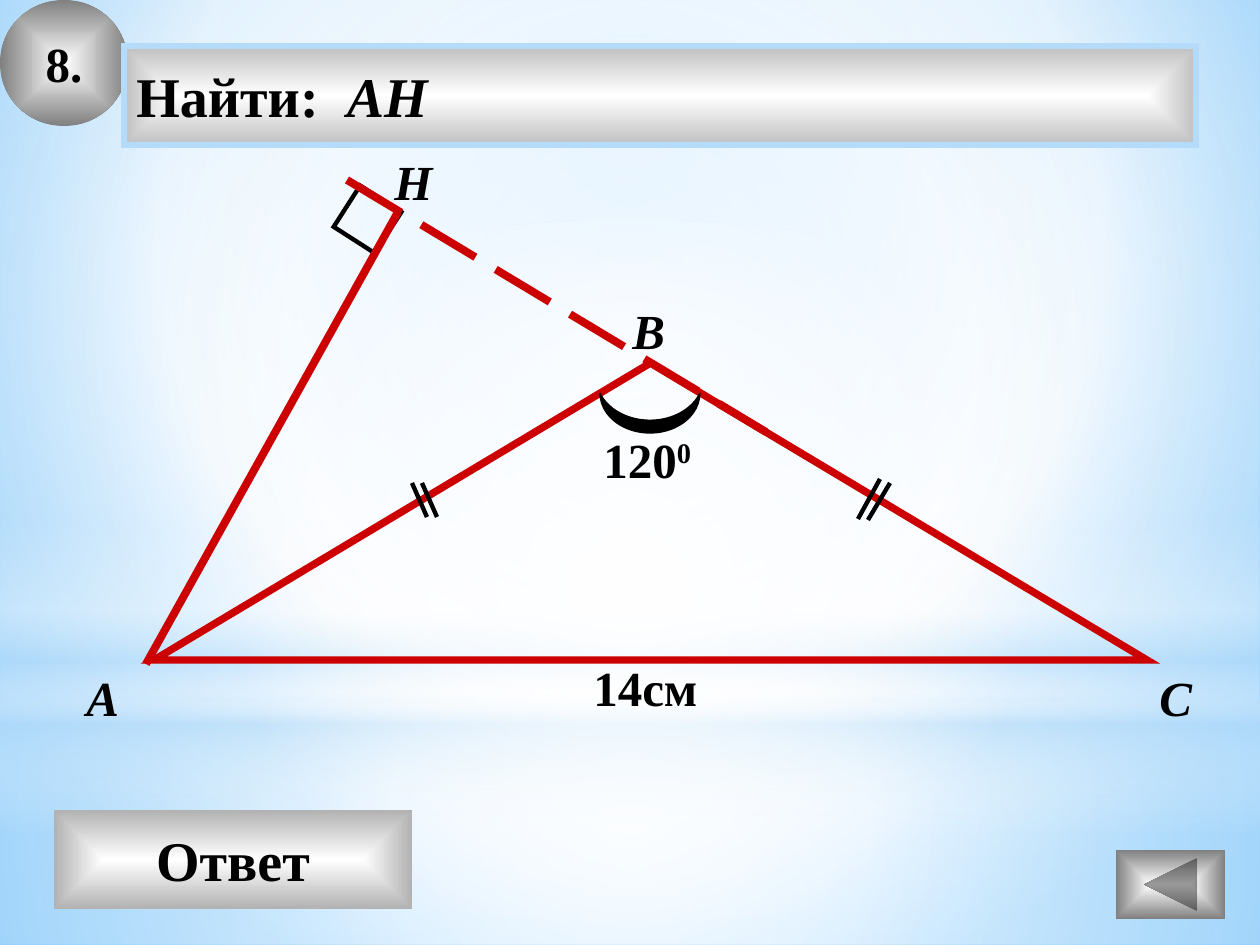
from pptx import Presentation
from pptx.dml.color import RGBColor
from pptx.enum.dml import MSO_LINE
from pptx.enum.shapes import MSO_CONNECTOR, MSO_SHAPE
from pptx.enum.text import MSO_ANCHOR, PP_ALIGN
from pptx.oxml import parse_xml
from pptx.oxml.ns import nsdecls, qn
from pptx.util import Pt

PX = 914400 / 126
FONT = "Times New Roman"
BLACK = RGBColor(0x00, 0x00, 0x00)
WHITE = RGBColor(0xFF, 0xFF, 0xFF)
RED = RGBColor(0xCC, 0x00, 0x00)
PALE = RGBColor(0xB4, 0xDC, 0xFA)
SKY = RGBColor(0x9E, 0xD5, 0xFF)
BLUE = RGBColor(0x5B, 0xB9, 0xFF)
GRAY = RGBColor(0x80, 0x80, 0x80)
SILVER = RGBColor(0xB2, 0xB2, 0xB2)
LIGHT = RGBColor(0xC0, 0xC0, 0xC0)

RECT, OVAL = MSO_SHAPE.RECTANGLE, MSO_SHAPE.OVAL
TRIANGLE, MOON = MSO_SHAPE.ISOSCELES_TRIANGLE, MSO_SHAPE.MOON
BUTTON = MSO_SHAPE.ACTION_BUTTON_CUSTOM
BACK = MSO_SHAPE.ACTION_BUTTON_BACK_OR_PREVIOUS
STRAIGHT = MSO_CONNECTOR.STRAIGHT
DASH = MSO_LINE.LONG_DASH
LEFT, CENTER = PP_ALIGN.LEFT, PP_ALIGN.CENTER
MIDDLE = MSO_ANCHOR.MIDDLE


def emu(*lengths):
    return [round(n * PX) for n in lengths]


def set_gradient(parent, stops, kind="circle", to=(50, 50, 50, 50)):
    """Swap the noFill of parent for a gradient; stops are (pos, colour, alpha)."""
    gs = "".join(
        f'<a:gs pos="{pos * 1000}"><a:srgbClr val="{color}">'
        f'<a:alpha val="{alpha * 1000}"/></a:srgbClr></a:gs>'
        for pos, color, alpha in stops)
    if kind == "linear":
        shade = '<a:lin ang="5400000" scaled="0"/>'
    else:
        l, t, r, b = (n * 1000 for n in to)
        shade = (f'<a:path path="{kind}">'
                 f'<a:fillToRect l="{l}" t="{t}" r="{r}" b="{b}"/></a:path>')
    grad = parse_xml(f'<a:gradFill {nsdecls("a")} rotWithShape="1">'
                     f'<a:gsLst>{gs}</a:gsLst>{shade}</a:gradFill>')
    parent.replace(parent.find(qn("a:noFill")), grad)


def set_line(line, color, width):
    line.color.rgb = color
    line.width = Pt(width)


def add_shape(s, kind, box, line=None, width=1):
    sp = s.shapes.add_shape(kind, *emu(*box))
    sp.shadow.inherit = False
    sp.fill.background()
    if line is None:
        sp.line.fill.background()
    else:
        set_line(sp.line, line, width)
        sp.line._ln.append(parse_xml(f'<a:miter {nsdecls("a")} lim="800000"/>'))
    return sp


def add_gradient_shape(s, kind, box, stops, shade="circle", **line):
    sp = add_shape(s, kind, box, **line)
    set_gradient(sp._element.spPr, stops, shade)
    return sp


def add_plate(s, kind, box, edge, shade, **line):
    stops = [(0, WHITE, 100), (100, edge, 100)]
    return add_gradient_shape(s, kind, box, stops, shade, **line)


def add_run(p, text, size, italic=False, raised=False):
    r = p.add_run()
    r.text = text
    r.font.name, r.font.size = FONT, Pt(size)
    r.font.bold, r.font.italic = True, italic
    r.font.color.rgb = BLACK
    if raised:
        r._r.get_or_add_rPr().set("baseline", "30000")


def start_text(sp, align):
    tf = sp.text_frame
    tf.word_wrap = False
    tf.vertical_anchor = MIDDLE
    p = tf.paragraphs[0]
    p.alignment = align
    return p


def add_label(s, x, y, w, text, italic=False, wrap=False):
    tf = s.shapes.add_textbox(*emu(x, y, w, 72)).text_frame
    tf.word_wrap = wrap
    p = tf.paragraphs[0]
    add_run(p, text, 28, italic)
    return p


def add_segment(s, ends, color, width, dash=None):
    c = s.shapes.add_connector(STRAIGHT, *emu(*ends))
    set_line(c.line, color, width)
    if dash is not None:
        c.line.dash_style = dash
    c._element.spPr.append(parse_xml(f'<a:effectLst {nsdecls("a")}/>'))


def add_backdrop(s):
    s.background.fill.background()
    set_gradient(s.element.xpath(".//p:bgPr")[0],
                 [(0, SKY, 100), (60, WHITE, 100), (100, BLUE, 100)],
                 to=(20, 10, 20, 60))
    add_gradient_shape(s, RECT, (0, 703, 1260, 242),
                       [(0, WHITE, 91), (37, WHITE, 76), (100, PALE, 79)])
    add_gradient_shape(s, RECT, (0, 0, 1260, 703),
                       [(0, WHITE, 89), (48, WHITE, 62), (100, PALE, 79)])
    add_gradient_shape(s, RECT, (0, 519, 1260, 315),
                       [(0, WHITE, 0), (29, WHITE, 30), (45, PALE, 40),
                        (55, WHITE, 26), (65, PALE, 60), (100, WHITE, 0)], "linear")
    add_gradient_shape(s, OVAL, (0, 220, 1260, 703),
                       [(0, WHITE, 100), (56, WHITE, 0)])


def main():
    prs = Presentation()
    prs.slide_width, prs.slide_height = emu(1260, 945)
    s = prs.slides.add_slide(prs.slide_layouts[6])
    add_backdrop(s)

    # Task number and answer button
    number = add_plate(s, OVAL, (0, 0, 128, 126), GRAY, "shape")
    add_run(start_text(number, CENTER), "8.", 28)
    answer = add_plate(s, BUTTON, (54, 810, 358, 99), SILVER, "rect")
    add_run(start_text(answer, CENTER), "Ответ", 32)

    # Right angle mark, below the title and the triangle
    corner = add_shape(s, RECT, (343, 195, 49, 49), BLACK, 2.5)
    corner.rotation = 32.7

    # Title
    title = add_plate(s, RECT, (124, 46, 1072, 99), LIGHT, "shape",
                      line=PALE, width=3)
    p = start_text(title, LEFT)
    add_run(p, "Найти:  ", 32)
    add_run(p, "AH", 32, italic=True)

    # Triangle with its height and the extended side
    add_segment(s, (398, 212, 146, 664), RED, 4.5)
    add_shape(s, TRIANGLE, (154, 363, 993, 297), RED, 4.25)
    add_segment(s, (347, 180, 766, 432), RED, 4.5, DASH)

    # Equal side marks
    for ends in ((412, 483, 427, 517), (422, 483, 437, 517),
                 (880, 479, 858, 519), (890, 483, 868, 520)):
        add_segment(s, ends, BLACK, 2.5)

    # Vertex names and measures
    for name, x, y in (("А", 74, 661), ("В", 620, 294),
                       ("С", 1147, 661), ("H", 382, 145)):
        add_label(s, x, y, 58, name, italic=True)
    add_label(s, 581, 651, 179, "14см", wrap=True)
    add_run(add_label(s, 591, 423, 116, "120"), "0", 28, raised=True)

    # Angle arc
    arc = add_shape(s, MOON, (630, 363, 40, 100), BLACK, 0.75)
    arc.adjustments[0] = 0.32
    arc.rotation = 270
    arc.fill.solid()
    arc.fill.fore_color.rgb = BLACK

    # Back button
    add_plate(s, BACK, (1116, 850, 109, 69), GRAY, "rect")

    prs.save("out.pptx")


if __name__ == "__main__":
    main()
